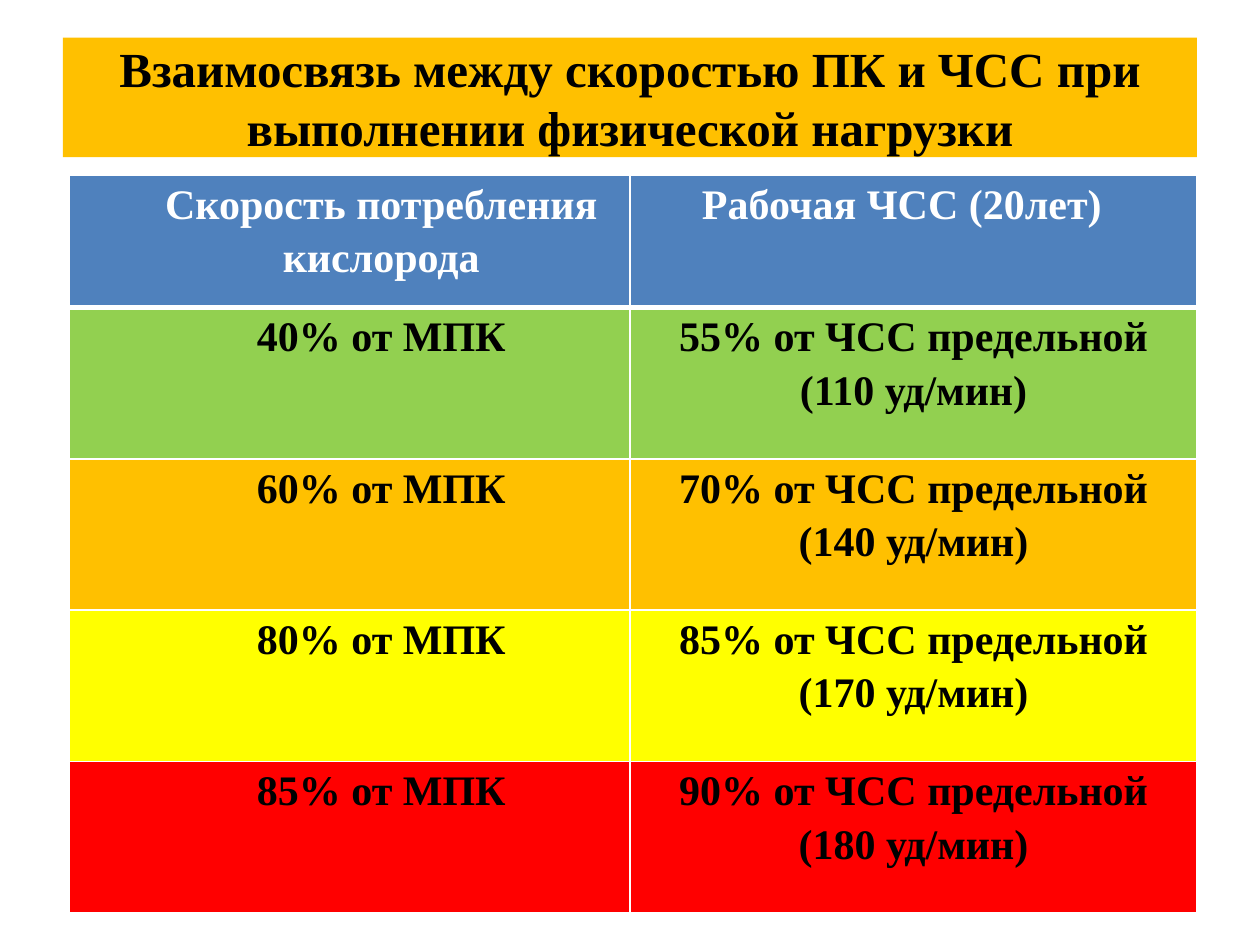
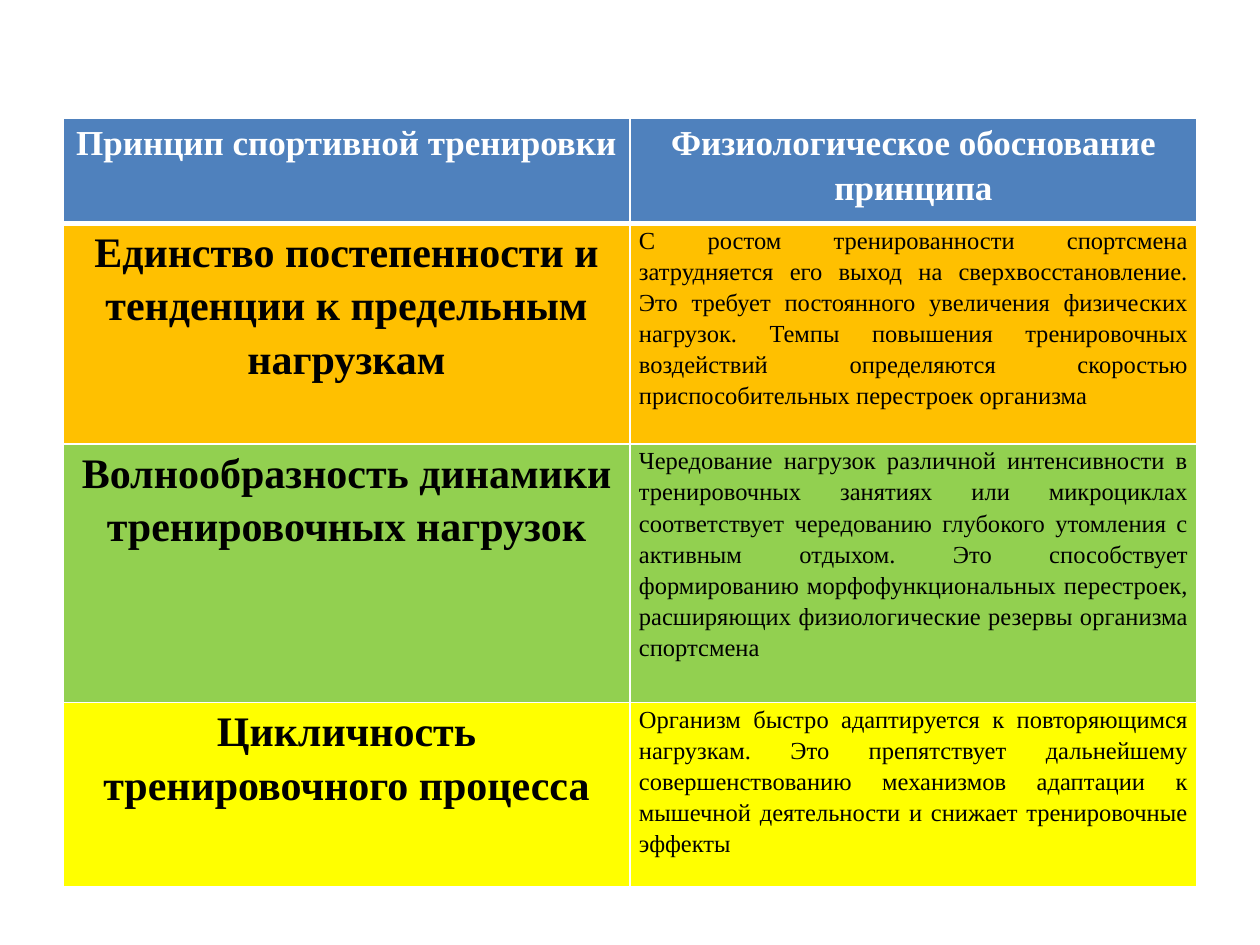
"""Build two slides of tables on exercise load and training principles."""
from dataclasses import dataclass
from typing import Any

from lxml import etree
from pptx import Presentation
from pptx.dml.color import RGBColor
from pptx.enum.shapes import MSO_SHAPE
from pptx.enum.text import MSO_ANCHOR, PP_ALIGN
from pptx.oxml.ns import qn
from pptx.util import Cm, Pt

CENTER, JUSTIFY = PP_ALIGN.CENTER, PP_ALIGN.JUSTIFY
MIDDLE = MSO_ANCHOR.MIDDLE
RECTANGLE = MSO_SHAPE.RECTANGLE


@dataclass(frozen=True)
class Theme:
    font: str = "Times New Roman"
    black: str = "000000"
    white: str = "FFFFFF"
    header: str = "4F81BD"
    green: str = "92D050"
    orange: str = "FFC000"
    yellow: str = "FFFF00"
    red: str = "FF0000"
    title: float = 28
    large: float = 24
    medium: float = 20
    small: float = 14
    rule: float = 1
    header_rule: float = 3
    spacing: float = 1.15


THEME = Theme()


@dataclass(frozen=True)
class TextStyle:
    size: float
    color: str = THEME.black
    bold: bool = True
    align: Any = CENTER
    indent: float = 0
    spacing: float = THEME.spacing


@dataclass(frozen=True)
class Row:
    height: float
    fill: str
    texts: tuple[str, str]
    styles: tuple[TextStyle, TextStyle]


@dataclass(frozen=True)
class Grid:
    left: float
    top: float
    columns: tuple[float, float]
    rows: tuple[Row, ...]


TITLE = "Взаимосвязь между скоростью ПК и ЧСС при выполнении физической нагрузки"
TITLE_STYLE = TextStyle(THEME.title, spacing=1.0)
INDENT = 1.27
LABEL = TextStyle(THEME.large)
INDENTED = TextStyle(THEME.large, indent=INDENT)
BODY = TextStyle(THEME.small, bold=False, align=JUSTIFY)
RATE_HEAD = TextStyle(THEME.large, THEME.white, indent=INDENT)
PULSE_HEAD = TextStyle(THEME.large, THEME.white, align=JUSTIFY, indent=INDENT)
PRINCIPLE_HEAD = TextStyle(THEME.medium, THEME.white)

LOADS = (
    (40, 55, 110, THEME.green),
    (60, 70, 140, THEME.orange),
    (80, 85, 170, THEME.yellow),
    (85, 90, 180, THEME.red),
)
PULSE_GRID = Grid(1.4, 3.53, (11.3, 11.43), (
    Row(2.67, THEME.header,
        ("Скорость потребления кислорода", "Рабочая ЧСС (20лет)"),
        (RATE_HEAD, PULSE_HEAD)),
    *(Row(3.05, fill,
          (f"{rate}% от МПК", f"{pulse}% от ЧСС предельной ({beats} уд/мин)"),
          (INDENTED, LABEL))
      for rate, pulse, beats, fill in LOADS),
))

PRINCIPLES = (
    (4.45, THEME.orange,
     "Единство постепенности и тенденции к предельным нагрузкам",
     "С ростом тренированности спортсмена затрудняется его выход на "
     "сверхвосстановление. Это требует постоянного увеличения физических "
     "нагрузок. Темпы повышения тренировочных воздействий определяются "
     "скоростью приспособительных перестроек организма"),
    (5.21, THEME.green,
     "Волнообразность динамики тренировочных нагрузок",
     "Чередование нагрузок различной интенсивности в тренировочных занятиях "
     "или микроциклах соответствует чередованию глубокого утомления с "
     "активным отдыхом. Это способствует формированию морфофункциональных "
     "перестроек, расширяющих физиологические резервы организма спортсмена"),
    (3.71, THEME.yellow,
     "Цикличность тренировочного процесса",
     "Организм быстро адаптируется к повторяющимся нагрузкам. Это "
     "препятствует дальнейшему совершенствованию механизмов адаптации к "
     "мышечной деятельности и снижает тренировочные эффекты"),
)
PRINCIPLE_GRID = Grid(1.27, 2.39, (11.43, 11.43), (
    Row(2.11, THEME.header,
        ("Принцип спортивной тренировки",
         "Физиологическое обоснование принципа"),
        (PRINCIPLE_HEAD, PRINCIPLE_HEAD)),
    *(Row(height, fill, (name, reason), (LABEL, BODY))
      for height, fill, name, reason in PRINCIPLES),
))


def set_all(target: Any, values: dict[str, Any]) -> None:
    for name, value in values.items():
        setattr(target, name, value)


def paint(target: Any, color: str) -> None:
    target.fill.solid()
    target.fill.fore_color.rgb = RGBColor.from_string(color)


def write(tf: Any, text: str, style: TextStyle) -> None:
    p = tf.paragraphs[0]
    set_all(p, {"alignment": style.align, "line_spacing": style.spacing})
    if style.indent:
        set_all_xml = p._p.get_or_add_pPr()
        set_all_xml.set("marL", str(Cm(style.indent)))
        set_all_xml.set("indent", "0")
    r = p.add_run()
    r.text = text
    set_all(r.font, {"name": THEME.font, "size": Pt(style.size), "bold": style.bold})
    r.font.color.rgb = RGBColor.from_string(style.color)


def add_borders(cell: Any, top: float, bottom: float) -> None:
    tc_pr = cell._tc.get_or_add_tcPr()
    widths = {"a:lnL": THEME.rule, "a:lnR": THEME.rule, "a:lnT": top, "a:lnB": bottom}
    for tag, width in widths.items():
        line = etree.SubElement(tc_pr, qn(tag), w=str(Pt(width)))
        fill = etree.SubElement(line, qn("a:solidFill"))
        etree.SubElement(fill, qn("a:srgbClr"), val=THEME.white)


def add_title(s: Any, text: str) -> None:
    sp = s.shapes.add_shape(RECTANGLE, Cm(1.27), Cm(0.76), Cm(22.86), Cm(2.41))
    sp.shadow.inherit = False
    paint(sp, THEME.orange)
    sp.line.fill.background()
    tf = sp.text_frame
    set_all(tf, {"word_wrap": True, "vertical_anchor": MIDDLE})
    write(tf, text, TITLE_STYLE)


def add_grid(s: Any, grid: Grid) -> None:
    width, height = sum(grid.columns), sum(row.height for row in grid.rows)
    table = s.shapes.add_table(len(grid.rows), len(grid.columns), Cm(grid.left),
                               Cm(grid.top), Cm(width), Cm(height)).table
    for column, column_width in zip(table.columns, grid.columns):
        column.width = Cm(column_width)
    margins = {"margin_left": Cm(0.18), "margin_right": Cm(0.18),
               "margin_top": 0, "margin_bottom": 0}
    for i, row in enumerate(grid.rows):
        table.rows[i].height = Cm(row.height)
        top = THEME.header_rule if i == 1 else THEME.rule
        bottom = THEME.header_rule if i == 0 else THEME.rule
        for j, (text, style) in enumerate(zip(row.texts, row.styles)):
            cell = table.cell(i, j)
            set_all(cell, margins)
            add_borders(cell, top, bottom)
            paint(cell, row.fill)
            write(cell.text_frame, text, style)


def main() -> None:
    prs = Presentation()
    set_all(prs, {"slide_width": Cm(25.4), "slide_height": Cm(19.05)})
    blank = prs.slide_layouts[6]
    s = prs.slides.add_slide(blank)
    add_title(s, TITLE)
    add_grid(s, PULSE_GRID)
    add_grid(prs.slides.add_slide(blank), PRINCIPLE_GRID)
    prs.save("out.pptx")


if __name__ == "__main__":
    main()
